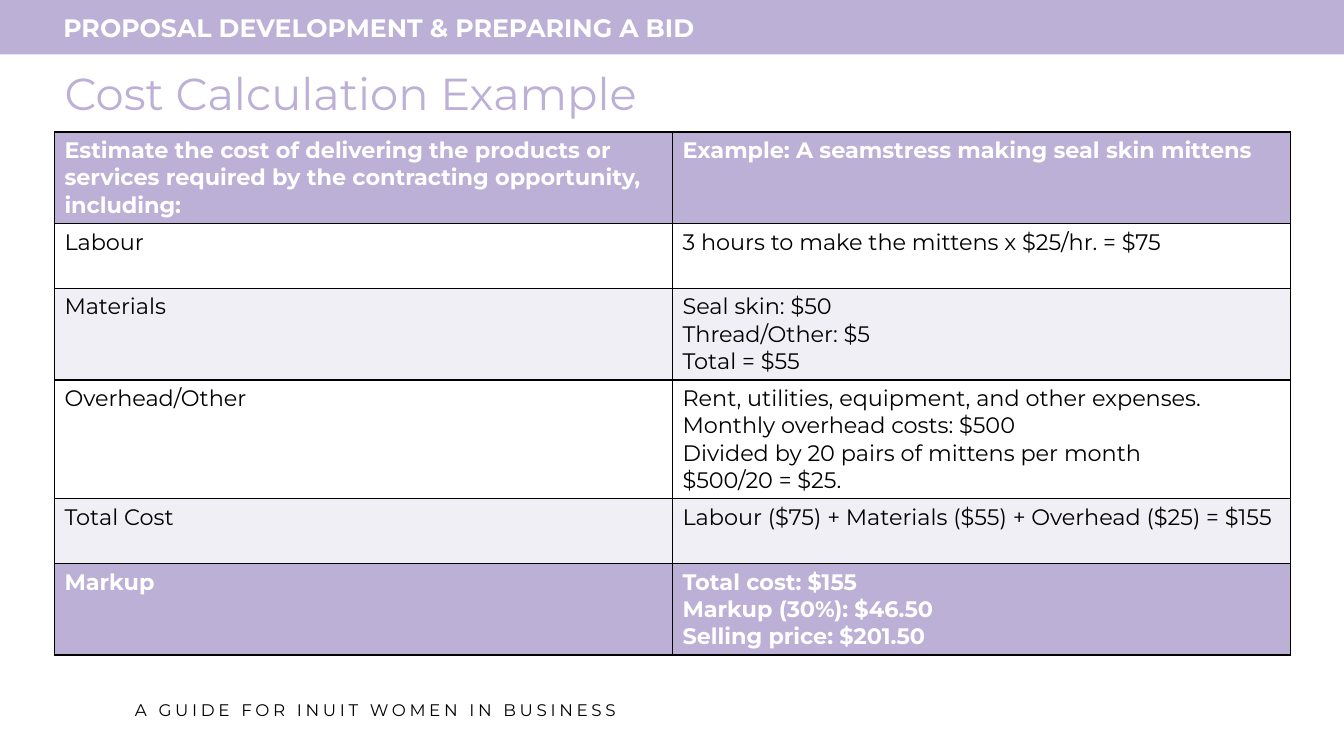
from lxml import etree
from pptx import Presentation
from pptx.dml.color import RGBColor
from pptx.enum.shapes import MSO_SHAPE
from pptx.enum.text import MSO_ANCHOR, MSO_AUTO_SIZE, PP_ALIGN
from pptx.oxml.ns import qn
from pptx.util import Inches, Pt

COLORS = {"lilac": "BDB0D6", "white": "FFFFFF", "black": "000000"}
FONT = "Montserrat"
TINT_PERCENT = 20
BORDER_POINTS = 1

COST_ROWS = [
    ("Estimate the cost of delivering the products or services required by "
     "the contracting opportunity, including:",
     "Example: A seamstress making seal skin mittens", 0.91, "accent"),
    ("Labour", "3 hours to make the mittens x $25/hr. = $75", 0.64, "plain"),
    ("Materials", "Seal skin: $50\nThread/Other: $5\nTotal = $55", 0.91, "tint"),
    ("Overhead/Other",
     "Rent, utilities, equipment, and other expenses.\n"
     "Monthly overhead costs: $500\n"
     "Divided by 20 pairs of mittens per month\n"
     "$500/20 = $25.", 1.18, "plain"),
    ("Total Cost", "Labour ($75) + Materials ($55) + Overhead ($25) = $155",
     0.64, "tint"),
    ("Markup", "Total cost: $155\nMarkup (30%): $46.50\nSelling price: $201.50",
     0.91, "accent"),
]


def color(name):
    return RGBColor.from_string(COLORS[name])


def format_text(text_frame, size, color_name, bold=False, line_spacing=None):
    for paragraph in text_frame.paragraphs:
        paragraph.alignment = PP_ALIGN.LEFT
        if line_spacing:
            paragraph.line_spacing = line_spacing
        font = paragraph.font
        font.name = FONT
        font.size = Pt(size)
        font.bold = bold
        font.color.rgb = color(color_name)


def add_band(slide, width, height):
    band = slide.shapes.add_shape(MSO_SHAPE.RECTANGLE, 0, 0, width, height)
    band.shadow.inherit = False
    band.fill.solid()
    band.fill.fore_color.rgb = color("lilac")
    band.line.fill.background()


def add_label(slide, text, left, top, width, height):
    label = slide.shapes.add_textbox(
        Inches(left), Inches(top), Inches(width), Inches(height))
    text_frame = label.text_frame
    text_frame.word_wrap = True
    text_frame.auto_size = MSO_AUTO_SIZE.SHAPE_TO_FIT_TEXT
    text_frame.text = text
    return text_frame


def set_title(slide, text):
    title = slide.shapes.title
    title.left, title.top = Inches(0.54), Inches(0.57)
    title.width, title.height = Inches(9.58), Inches(0.77)
    text_frame = title.text_frame
    text_frame.text = text
    text_frame.auto_size = MSO_AUTO_SIZE.NONE
    text_frame.vertical_anchor = MSO_ANCHOR.MIDDLE
    format_text(text_frame, 32, "lilac", line_spacing=0.9)


def set_borders(cell):
    properties = cell._tc.get_or_add_tcPr()
    for side in ("a:lnL", "a:lnR", "a:lnT", "a:lnB"):
        line = etree.SubElement(properties, qn(side), w=str(Pt(BORDER_POINTS)))
        fill = etree.SubElement(line, qn("a:solidFill"))
        etree.SubElement(fill, qn("a:srgbClr"), val=COLORS["black"])


def fill_cell(cell, style):
    cell.fill.solid()
    cell.fill.fore_color.rgb = color("white" if style == "plain" else "lilac")
    if style == "tint":
        fill_color = cell._tc.tcPr.find(qn("a:solidFill")).find(qn("a:srgbClr"))
        etree.SubElement(fill_color, qn("a:alpha"), val=str(TINT_PERCENT * 1000))


def add_cost_table(slide):
    total_height = sum(height for _, _, height, _ in COST_ROWS)
    table = slide.shapes.add_table(
        len(COST_ROWS), 2, Inches(0.54), Inches(1.31),
        Inches(12.26), Inches(total_height)).table
    table.first_row = False
    table.horz_banding = False
    for row, (item, example, height, style) in zip(table.rows, COST_ROWS):
        row.height = Inches(height)
        accent = style == "accent"
        for cell, text in zip(row.cells, (item, example)):
            cell.text = text
            format_text(cell.text_frame, 16, "white" if accent else "black", accent)
            set_borders(cell)
            fill_cell(cell, style)


def main():
    presentation = Presentation()
    presentation.slide_width = Inches(13.33)
    presentation.slide_height = Inches(7.5)
    slide = presentation.slides.add_slide(presentation.slide_layouts[5])

    add_band(slide, presentation.slide_width, Inches(0.54))
    header = add_label(slide, "PROPOSAL DEVELOPMENT & PREPARING A BID",
                       0.53, 0.13, 12.8, 0.35)
    format_text(header, 18, "white", bold=True, line_spacing=0.8)
    footer = add_label(slide, "A GUIDE FOR INUIT WOMEN IN BUSINESS",
                       1.24, 6.89, 8.17, 0.3)
    format_text(footer, 12, "black")
    footer.paragraphs[0].runs[0]._r.get_or_add_rPr().set("spc", "260")
    set_title(slide, "Cost Calculation Example")
    add_cost_table(slide)

    presentation.save("out.pptx")


if __name__ == "__main__":
    main()
